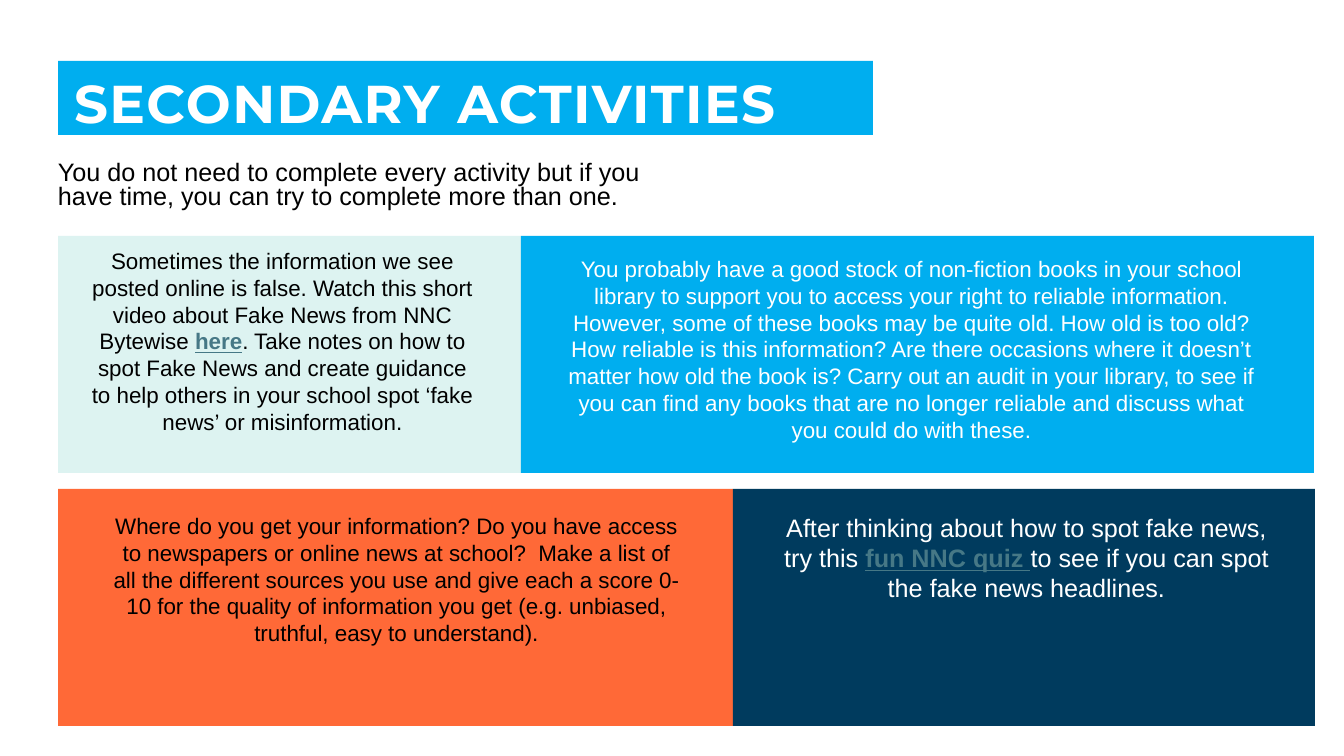
from pptx import Presentation
from pptx.dml.color import RGBColor
from pptx.enum.shapes import MSO_SHAPE as SHAPE
from pptx.enum.text import MSO_ANCHOR as ANCHOR, PP_ALIGN as ALIGN
from pptx.util import Emu, Pt

WHITE, BLACK, LINK = "FFFFFF", "000000", "467886"
BLUE, MINT, ORANGE, NAVY = "00AEEF", "DDF3F1", "FF6937", "003B5E"

TITLE = "SECONDARY ACTIVITIES"
INTRO = ("You do not need to complete every activity but if you have time, "
         "you can try to complete more than one.")

# Rows of panels: top, then width, fill, text box, size, colour and
# text parts of each panel; every second part is a link.
LEFT, HIGH = 58, 237
ROWS = [
    (236, [
        (463, MINT, (78, 242, 409, 201), 16, BLACK, [
            "Sometimes the information we see posted online is false. Watch "
            "this short video about Fake News from NNC Bytewise ",
            "here",
            ". Take notes on how to spot Fake News and create guidance to "
            "help others in your school spot ‘fake news’ or misinformation."]),
        (793, BLUE, (557, 250, 709, 201), 16, WHITE, [
            "You probably have a good stock of non-fiction books in your "
            "school library to support you to access your right to reliable "
            "information. However, some of these books may be quite old. How "
            "old is too old? How reliable is this information? Are there "
            "occasions where it doesn’t matter how old the book is? Carry out "
            "an audit in your library, to see if you can find any books that "
            "are no longer reliable and discuss what you could do with "
            "these."]),
    ]),
    (489, [
        (675, ORANGE, (100, 507, 593, 146), 16, BLACK, [
            "Where do you get your information? Do you have access to "
            "newspapers or online news at school?  Make a list of all the "
            "different sources you use and give each a score 0-10 for the "
            "quality of information you get (e.g. unbiased, truthful, easy to "
            "understand)."]),
        (582, NAVY, (763, 507, 527, 102), 18, WHITE, [
            "After thinking about how to spot fake news, try this ",
            "fun NNC quiz ",
            "to see if you can spot the fake news headlines."]),
    ]),
]


def px(n):
    return Emu(round(n * 914400 / 100.8))


def rgb(code):
    return RGBColor.from_string(code)


def panel(x, y, w, h, fill):
    box = slide.shapes.add_shape(SHAPE.RECTANGLE, *map(px, (x, y, w, h)))
    box.shadow.inherit = False
    box.fill.solid()
    box.fill.fore_color.rgb = rgb(fill)
    box.line.fill.background()
    return box


def write(box, parts, size, color, face="Arial", pad=(10, 5, 10, 5),
          align=ALIGN.LEFT, space=1.0):
    """Fill a box with one paragraph, styling every second part as a link."""
    frame = box.text_frame
    frame.word_wrap = True
    frame.margin_left, frame.margin_top, frame.margin_right, \
        frame.margin_bottom = map(px, pad)
    para = frame.paragraphs[0]
    para.alignment, para.line_spacing = align, space
    font = para.font
    font.name, font.size = face, Pt(size)
    font.color.rgb = rgb(color)
    for i, part in enumerate(parts):
        run = para.add_run()
        run.text = part
        link = i % 2 == 1
        run.font.name, run.font.size = face, Pt(size)
        run.font.color.rgb = rgb(LINK if link else color)
        if link:
            run.font.bold = run.font.underline = True
    return para


def label(area):
    return slide.shapes.add_textbox(*map(px, area))


deck = Presentation()
deck.slide_width, deck.slide_height = px(1344), px(756)
slide = deck.slides.add_slide(deck.slide_layouts[6])

banner = panel(LEFT, 61, 815, 74, BLUE)
banner.text_frame.vertical_anchor = ANCHOR.MIDDLE
head = write(banner, [TITLE], 38, WHITE, "Montserrat", (16, 16, 12, 0),
             space=0.9)
head.runs[0].font.bold = True
head.runs[0].font._element.set("spc", "100")

write(label((LEFT, 157, 626, 62)), [INTRO], 18, BLACK, pad=(0, 5, 10, 5),
      space=0.8)

for top, cells in ROWS:
    x = LEFT
    for wide, fill, area, size, color, parts in cells:
        panel(x, top, wide, HIGH, fill)
        write(label(area), parts, size, color, align=ALIGN.CENTER)
        x += wide

deck.save("out.pptx")
